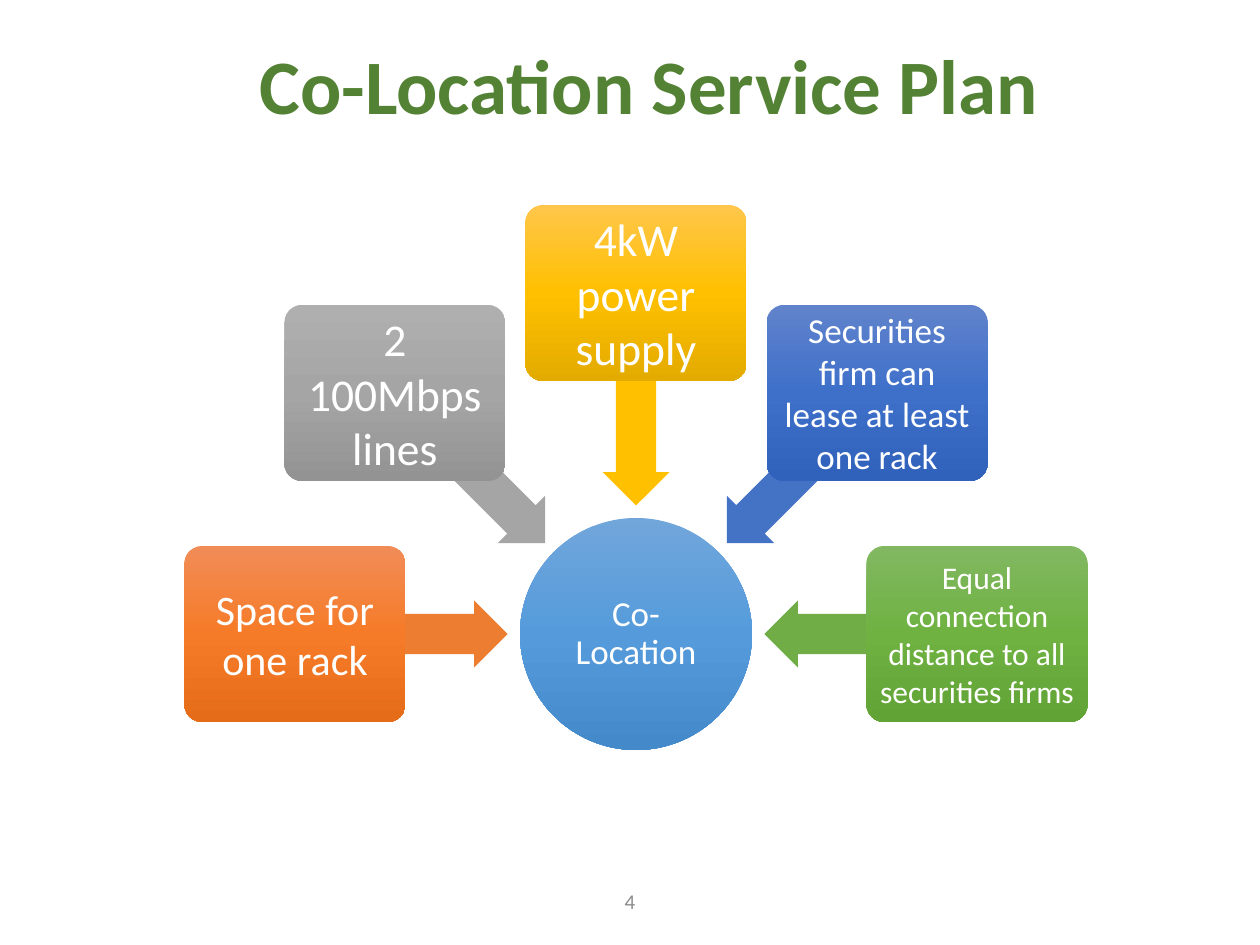
from copy import deepcopy
from dataclasses import dataclass
from math import cos, radians, sin

from pptx import Presentation
from pptx.dml.color import RGBColor
from pptx.enum.shapes import MSO_SHAPE as Preset
from pptx.enum.text import MSO_ANCHOR as Anchor, PP_ALIGN as Align
from pptx.util import Emu, Pt

PX = 914400 / 126
FONT = "Calibri"
WHITE = RGBColor(0xFF, 0xFF, 0xFF)
TITLE_GREEN = RGBColor(0x54, 0x82, 0x35)
NUMBER_GRAY = RGBColor(0x8C, 0x8C, 0x8C)
ORANGE = RGBColor(0xED, 0x7D, 0x31)
GRAY = RGBColor(0xA5, 0xA5, 0xA5)
GOLD = RGBColor(0xFF, 0xC0, 0x00)
BLUE = RGBColor(0x44, 0x72, 0xC4)
GREEN = RGBColor(0x70, 0xAD, 0x47)
HUB_SHADES = (RGBColor(0x71, 0xA6, 0xDB), RGBColor(0x55, 0x9B, 0xDB),
              RGBColor(0x44, 0x8A, 0xCA))
ORANGE_SHADES = (RGBColor(0xF1, 0x8C, 0x57), RGBColor(0xF6, 0x7B, 0x28),
                 RGBColor(0xE5, 0x6C, 0x19))
GRAY_SHADES = (RGBColor(0xAF, 0xAF, 0xAF), GRAY, RGBColor(0x93, 0x93, 0x93))
GOLD_SHADES = (RGBColor(0xFF, 0xC6, 0x4B), GOLD, RGBColor(0xE3, 0xAB, 0x00))
BLUE_SHADES = (RGBColor(0x61, 0x83, 0xCB), RGBColor(0x3E, 0x70, 0xCA),
               RGBColor(0x30, 0x62, 0xBB))
GREEN_SHADES = (RGBColor(0x81, 0xB8, 0x61), RGBColor(0x6F, 0xB2, 0x42),
                RGBColor(0x62, 0xA3, 0x36))

# Radial layout, in px
HUB_X, HUB_Y, HUB_SIZE = 636, 634, 232
ARROW_RADIUS, ARROW_WIDTH, ARROW_HEIGHT = 235, 213, 67
BOX_RADIUS, BOX_WIDTH, BOX_HEIGHT = 341, 221, 176


@dataclass(frozen=True)
class Feature:
    text: str
    angle: int  # degrees, counterclockwise from the right of the hub
    size: int
    arrow_color: RGBColor
    shades: tuple[RGBColor, RGBColor, RGBColor]


FEATURES = (
    Feature("Space for one rack", 180, 24, ORANGE, ORANGE_SHADES),
    Feature("2 100Mbps lines", 135, 26, GRAY, GRAY_SHADES),
    Feature("4kW power supply", 90, 26, GOLD, GOLD_SHADES),
    Feature("Securities firm can lease at least one rack", 45, 20, BLUE, BLUE_SHADES),
    Feature("Equal connection distance to all securities firms ", 0, 18, GREEN, GREEN_SHADES),
)


def px(length: float) -> Emu:
    return Emu(round(length * PX))


def write(shape, text: str, size: int, color: RGBColor, inset: int,
          bold: bool = False) -> None:
    frame = shape.text_frame
    frame.word_wrap = True
    frame.vertical_anchor = Anchor.MIDDLE
    frame.margin_left = frame.margin_right = px(inset)
    frame.margin_top = frame.margin_bottom = px(inset)
    para = frame.paragraphs[0]
    para.text = text
    para.alignment = Align.CENTER
    font = para.font
    font.name, font.size, font.bold = FONT, Pt(size), bold
    font.color.rgb = color


def add_label(page, left: int, top: int, width: int, height: int,
              text: str, size: int, color: RGBColor, bold: bool = False) -> None:
    box = page.shapes.add_textbox(px(left), px(top), px(width), px(height))
    write(box, text, size, color, 6, bold)


def add_centered(page, preset: Preset, x: float, y: float, width: int, height: int):
    shape = page.shapes.add_shape(preset, px(x - width / 2), px(y - height / 2),
                                  px(width), px(height))
    shape.shadow.inherit = False
    shape.line.fill.background()
    return shape


def shade(shape, colors: tuple[RGBColor, RGBColor, RGBColor]) -> None:
    fill = shape.fill
    fill.gradient()
    fill.gradient_angle = 270
    # The default gradient has two stops; a third is needed
    last = shape._element.spPr.xpath("a:gradFill/a:gsLst/a:gs")[-1]
    last.addprevious(deepcopy(last))
    for stop, color, position in zip(fill.gradient_stops, colors, (0, 0.5, 1)):
        stop.color.rgb = color
        stop.position = position


def around_hub(angle: int, radius: int) -> tuple[float, float]:
    return (HUB_X + radius * cos(radians(angle)),
            HUB_Y - radius * sin(radians(angle)))


def add_hub(page) -> None:
    hub = add_centered(page, Preset.OVAL, HUB_X, HUB_Y, HUB_SIZE, HUB_SIZE)
    shade(hub, HUB_SHADES)
    write(hub, "Co-Location", 20, WHITE, 3)
    hub.text_frame.paragraphs[0].line_spacing = 0.9


def add_feature(page, feature: Feature) -> None:
    arrow = add_centered(page, Preset.LEFT_ARROW,
                         *around_hub(feature.angle, ARROW_RADIUS),
                         ARROW_WIDTH, ARROW_HEIGHT)
    arrow.adjustments[0] = 0.6
    arrow.adjustments[1] = 0.5
    arrow.rotation = -feature.angle % 360
    arrow.fill.solid()
    arrow.fill.fore_color.rgb = feature.arrow_color

    box = add_centered(page, Preset.ROUNDED_RECTANGLE,
                       *around_hub(feature.angle, BOX_RADIUS),
                       BOX_WIDTH, BOX_HEIGHT)
    box.adjustments[0] = 0.1
    shade(box, feature.shades)
    write(box, feature.text, feature.size, WHITE, 7)


def main() -> None:
    deck = Presentation()
    deck.slide_width, deck.slide_height = px(1260), px(945)
    page = deck.slides.add_slide(deck.slide_layouts[6])
    page.background.fill.solid()
    page.background.fill.fore_color.rgb = WHITE

    # Title and page number
    add_label(page, 91, 19, 1134, 129, "Co-Location Service Plan ", 44, TITLE_GREEN, True)
    add_label(page, 483, 876, 294, 50, "4", 12, NUMBER_GRAY)

    # Hub with the features pointing at it
    add_hub(page)
    for feature in FEATURES:
        add_feature(page, feature)

    deck.save("out.pptx")


if __name__ == "__main__":
    main()
